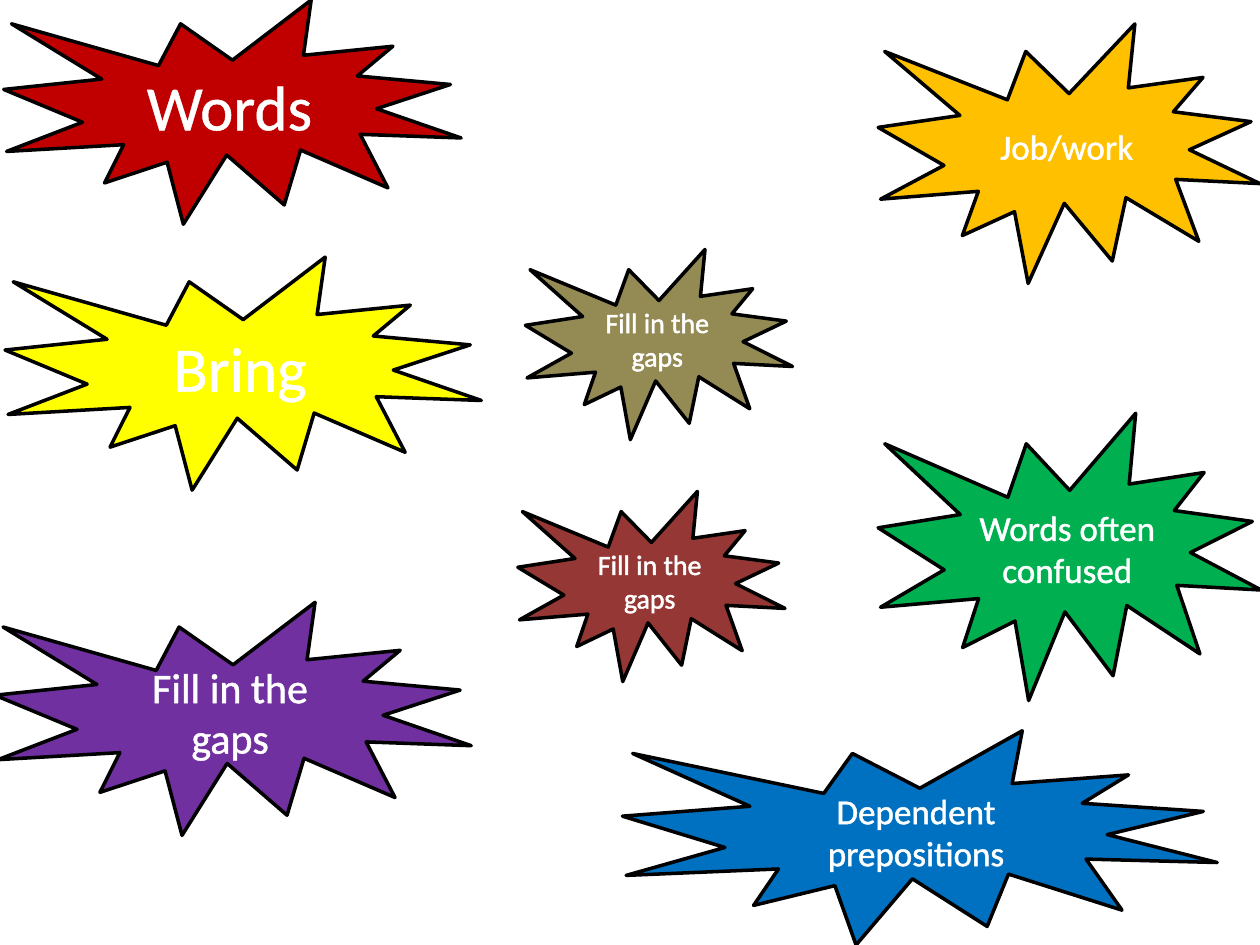
"""Build a slide of coloured starbursts that label vocabulary exercises."""
from dataclasses import dataclass

import lxml.etree
import pptx
import pptx.dml.color
import pptx.enum.shapes
import pptx.enum.text
import pptx.oxml.ns
import pptx.slide
import pptx.text.text
import pptx.util


@dataclass(frozen=True)
class Theme:
    font: str = "Calibri"
    text: str = "FFFFFF"
    outline: str = "000000"
    red: str = "C00000"
    amber: str = "FFC000"
    yellow: str = "FFFF00"
    green: str = "00B050"
    blue: str = "0070C0"
    purple: str = "7030A0"
    maroon: str = "953735"
    olive: str = "948A54"
    title_size: float = 36
    large_size: float = 24
    medium_size: float = 20
    small_size: float = 16
    line_width: float = 2
    text_outline_width: float = 1.45


@dataclass(frozen=True)
class Burst:
    label: str
    left: float
    top: float
    width: float
    height: float
    fill: str
    size: float


THEME = Theme()
BURSTS = (
    Burst("Words", 0.03, 0, 3.63, 1.78, THEME.red, THEME.title_size),
    Burst("Job/work", 6.97, 0.19, 3.03, 2.06, THEME.amber, THEME.medium_size),
    Burst("Bring", 0.04, 2.04, 3.78, 1.85, THEME.yellow, THEME.title_size),
    Burst("Words often confused", 6.97, 3.28, 3.04, 2.28, THEME.green, THEME.medium_size),
    Burst("Dependent prepositions", 4.94, 5.8, 4.72, 1.7, THEME.blue, THEME.medium_size),
    Burst("Fill in the gaps", -0.04, 4.78, 3.78, 1.85, THEME.purple, THEME.large_size),
    Burst("Fill in the gaps", 4.11, 3.9, 2.12, 1.51, THEME.maroon, THEME.small_size),
    Burst("Fill in the gaps", 4.17, 1.98, 2.12, 1.51, THEME.olive, THEME.small_size),
)


def rgb(value: str) -> pptx.dml.color.RGBColor:
    """Turn a hexadecimal string into a colour."""
    return pptx.dml.color.RGBColor.from_string(value)


def outline_text(run: pptx.text.text._Run) -> None:
    """Give the letters of a run an outline in the text colour."""
    qualify = pptx.oxml.ns.qn
    line = lxml.etree.Element(qualify("a:ln"), w=str(int(pptx.util.Pt(THEME.text_outline_width))))
    fill = lxml.etree.SubElement(line, qualify("a:solidFill"))
    lxml.etree.SubElement(fill, qualify("a:srgbClr"), val=THEME.text)
    run.font._element.insert(0, line)


def draw_burst(slide: pptx.slide.Slide, burst: Burst) -> None:
    """Draw one starburst with its centred label."""
    bounds = (burst.left, burst.top, burst.width, burst.height)
    shape = slide.shapes.add_shape(
        pptx.enum.shapes.MSO_SHAPE.EXPLOSION1, *map(pptx.util.Inches, bounds)
    )
    shape.shadow.inherit = False
    shape.fill.solid()
    shape.fill.fore_color.rgb = rgb(burst.fill)
    shape.line.color.rgb = rgb(THEME.outline)
    shape.line.width = pptx.util.Pt(THEME.line_width)
    frame = shape.text_frame
    frame.word_wrap = True
    frame.vertical_anchor = pptx.enum.text.MSO_ANCHOR.MIDDLE
    paragraph = frame.paragraphs[0]
    paragraph.alignment = pptx.enum.text.PP_ALIGN.CENTER
    run = paragraph.add_run()
    run.text = burst.label
    run.font.name = THEME.font
    run.font.size = pptx.util.Pt(burst.size)
    run.font.color.rgb = rgb(THEME.text)
    outline_text(run)


def main() -> None:
    """Build and save the presentation."""
    presentation = pptx.Presentation()
    presentation.slide_width = pptx.util.Inches(10)
    presentation.slide_height = pptx.util.Inches(7.5)
    slide = presentation.slides.add_slide(presentation.slide_layouts[6])
    for burst in BURSTS:
        draw_burst(slide, burst)
    presentation.save("out.pptx")


if __name__ == "__main__":
    main()
